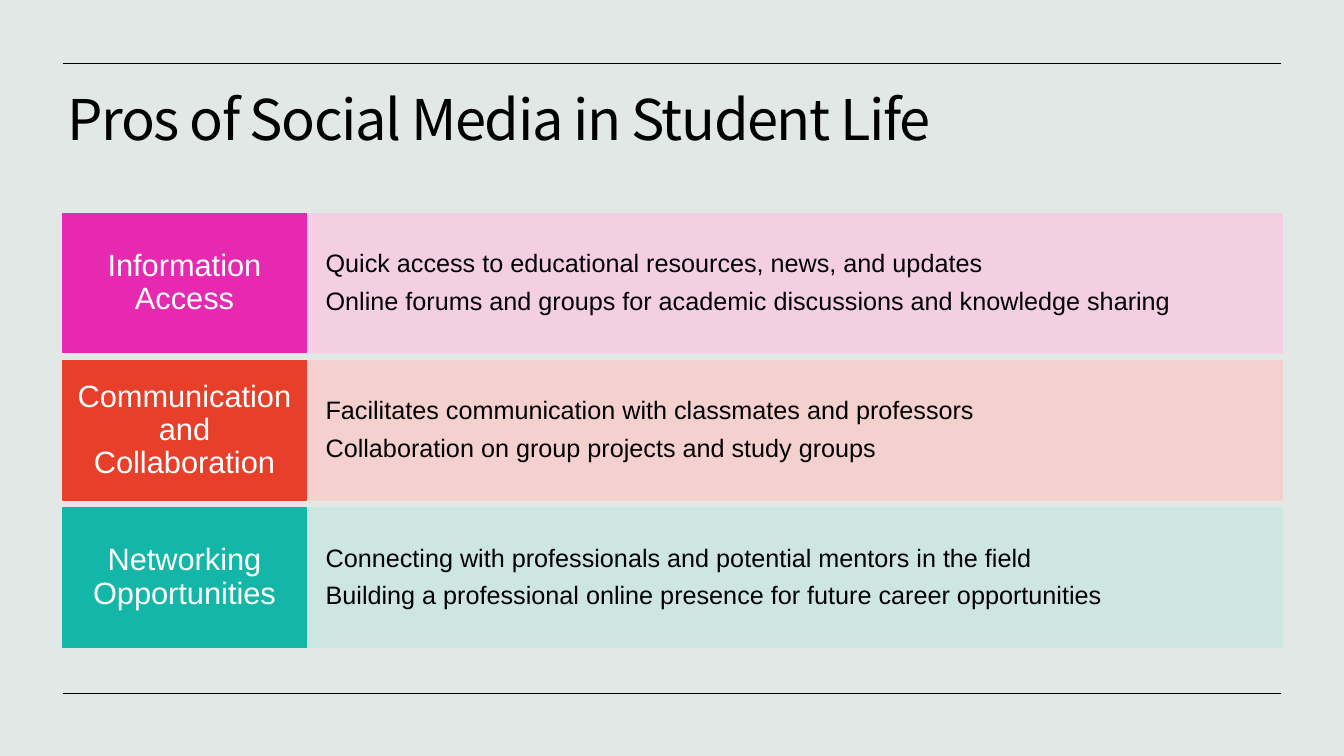
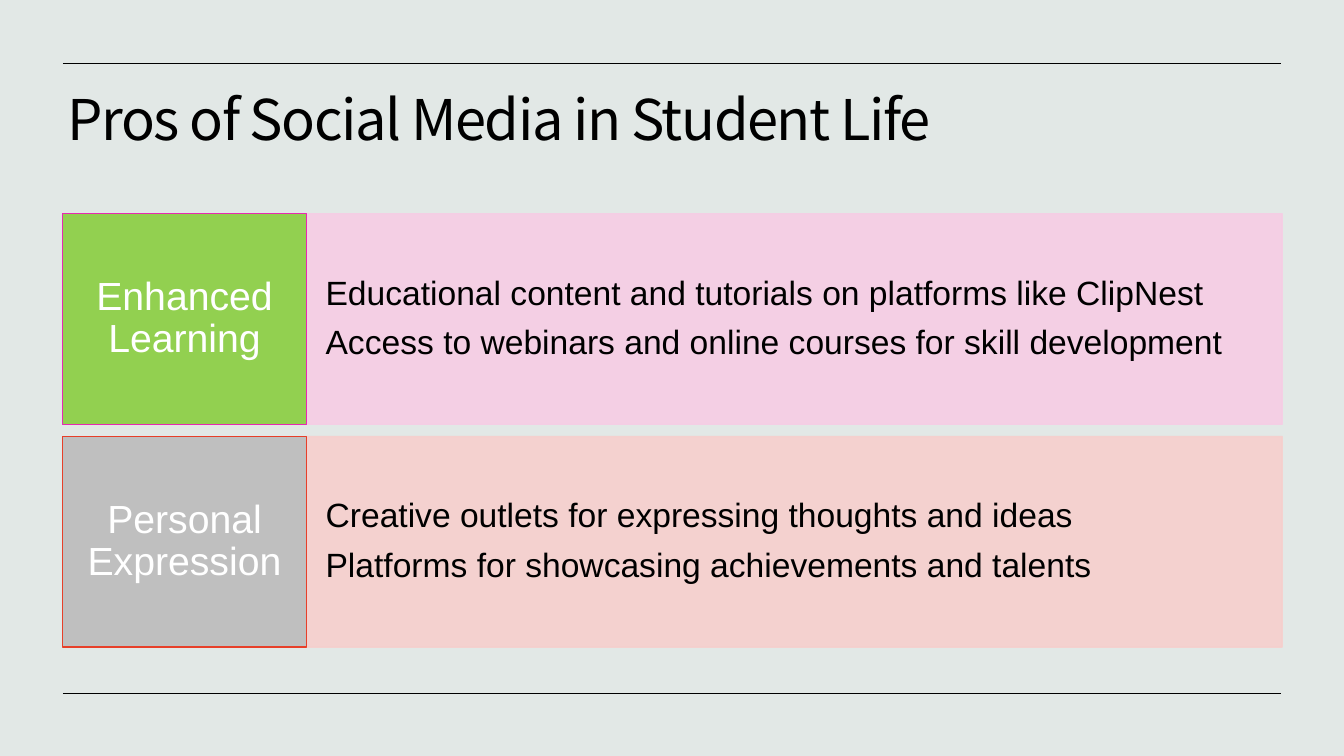
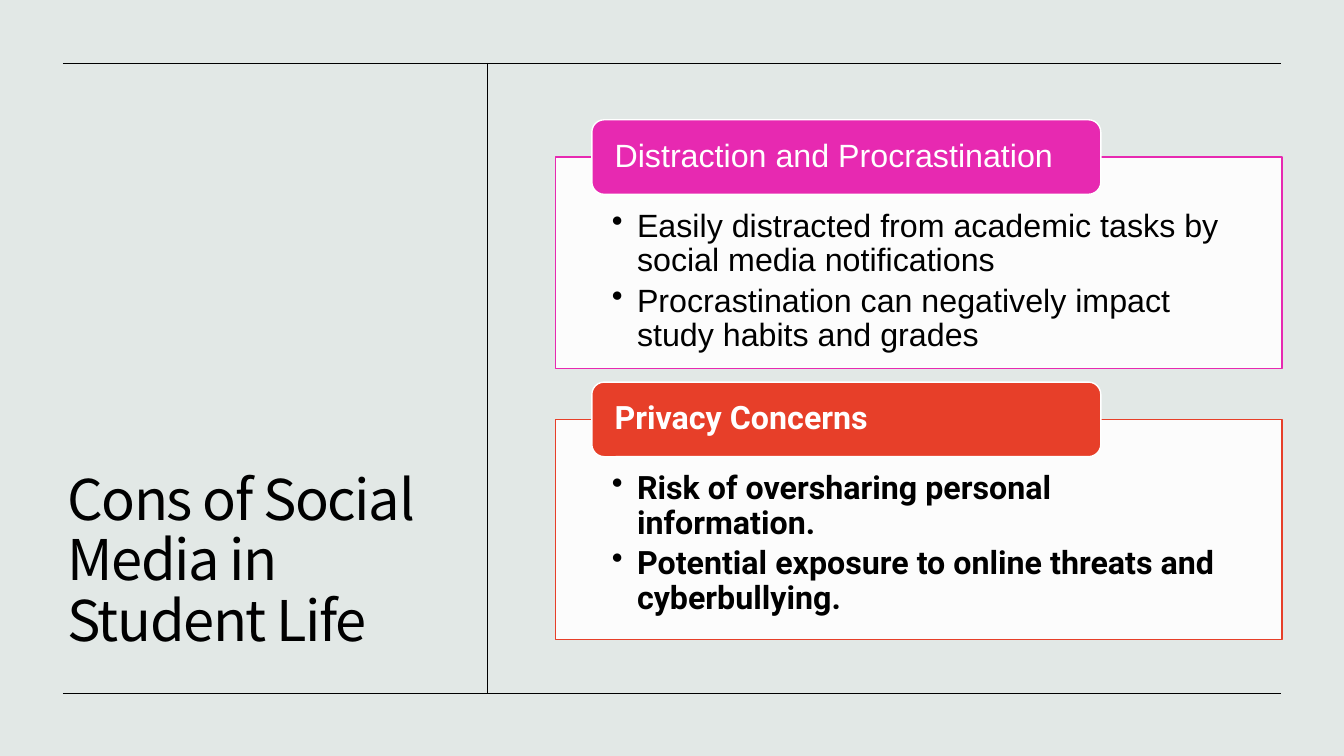
import pptx
import pptx.dml.color
import pptx.enum.shapes
import pptx.enum.text
import pptx.oxml
import pptx.oxml.ns
import pptx.util
from dataclasses import dataclass

Pt = pptx.util.Pt
SHAPE = pptx.enum.shapes.MSO_SHAPE
ANCHOR = pptx.enum.text.MSO_ANCHOR
ALIGN = pptx.enum.text.PP_ALIGN


@dataclass(frozen=True)
class Theme:
    background: str = "E2E8E6"
    ink: str = "000000"
    white: str = "FFFFFF"
    pink: str = "E729B1"
    red: str = "E73F29"
    teal: str = "14B7A7"
    green: str = "92D050"
    grey: str = "BFBFBF"
    pale_pink: str = "F6CDE4"
    pale_red: str = "F6CFCD"
    pale_teal: str = "CCE6E1"
    title_font: str = "Noto Sans CJK KR"
    body_font: str = "Arial"
    strong_font: str = "Roboto"
    title_size: float = 40
    row_label_size: float = 22
    row_detail_size: float = 18
    large_label_size: float = 28
    large_detail_size: float = 24
    card_size: float = 23
    line_spacing: float = 0.9
    loose: float = 0.4    # space after a paragraph, as a share of its type size
    tight: float = 0.17


THEME = Theme()

# Shared page geometry, in points
WIDTH, HEIGHT = 960, 540
LEFT, RIGHT = 44.64, 915.84
RULE_LEFT, RULE_RIGHT = 45, 915
RULE_TOP, RULE_BOTTOM = 45, 495
TITLE_LEFT = 41


def rgb(value):
    return pptx.dml.color.RGBColor.from_string(value)


def add_xml(parent, tag, **attributes):
    child = pptx.oxml.parse_xml(f"<a:{tag} {pptx.oxml.ns.nsdecls('a')}/>")
    for key, value in attributes.items():
        child.set(key, value)
    parent.append(child)


def soften(fill_parent):
    """Make the solid fill inside the given element 90 % opaque."""
    qn = pptx.oxml.ns.qn
    color = fill_parent.find(qn("a:solidFill")).find(qn("a:srgbClr"))
    add_xml(color, "alpha", val="90000")


class Deck:
    def __init__(self, theme):
        self.theme = theme
        self.show = pptx.Presentation()
        self.show.slide_width, self.show.slide_height = Pt(WIDTH), Pt(HEIGHT)
        background = self.show.slide_master.background.fill
        background.solid()
        background.fore_color.rgb = rgb(theme.background)
        self.slide = None

    def new_slide(self, title, top, width, height, anchor=ANCHOR.TOP):
        """Start a slide with its title and the two horizontal rules."""
        self.slide = self.show.slides.add_slide(self.show.slide_layouts[5])
        heading = self.slide.shapes.title
        heading.left, heading.top = Pt(TITLE_LEFT), Pt(top)
        heading.width, heading.height = Pt(width), Pt(height)
        heading.text_frame.auto_size = pptx.enum.text.MSO_AUTO_SIZE.NONE
        self.set_text(heading, [title], self.theme.title_size, self.theme.ink,
                      font=self.theme.title_font, anchor=anchor,
                      insets=(7.2, 3.6, 7.2, 3.6), after=0)
        for run in heading.text_frame.paragraphs[0].runs:
            run._r.get_or_add_rPr().set("spc", "-100")
        for y in (RULE_TOP, RULE_BOTTOM):
            self.rule(RULE_LEFT, y, RULE_RIGHT, y)

    def rule(self, x1, y1, x2, y2):
        rule = self.slide.shapes.add_connector(
            pptx.enum.shapes.MSO_CONNECTOR.STRAIGHT, Pt(x1), Pt(y1), Pt(x2), Pt(y2))
        rule.line.color.rgb = rgb(self.theme.ink)
        rule.line.width = Pt(0.5)
        add_xml(rule._element.spPr, "effectLst")

    def box(self, left, top, width, height, fill, line,
            kind=SHAPE.RECTANGLE, soft_fill=False, soft_line=False):
        box = self.slide.shapes.add_shape(kind, Pt(left), Pt(top), Pt(width), Pt(height))
        box.shadow.inherit = False
        box.fill.solid()
        box.fill.fore_color.rgb = rgb(fill)
        box.line.color.rgb = rgb(line)
        box.line.width = Pt(1)
        if soft_fill:
            soften(box._element.spPr)
        if soft_line:
            soften(box._element.spPr.find(pptx.oxml.ns.qn("a:ln")))
        return box

    def set_text(self, shape, lines, size, color, font=None, bold=False, align=ALIGN.LEFT,
                 anchor=ANCHOR.MIDDLE, insets=(0, 0, 0, 0), after=None, bullets=False):
        frame = shape.text_frame
        frame.word_wrap = True
        frame.vertical_anchor = anchor
        (frame.margin_left, frame.margin_top,
         frame.margin_right, frame.margin_bottom) = map(Pt, insets)
        frame.text = "\n".join(lines)
        after = self.theme.loose if after is None else after
        for paragraph in frame.paragraphs:
            paragraph.alignment = align
            paragraph.line_spacing = self.theme.line_spacing
            paragraph.space_before = Pt(0)
            paragraph.space_after = Pt(round(after * size, 1))
            if bullets:
                settings = paragraph._p.get_or_add_pPr()
                settings.set("marL", str(Pt(18)))
                settings.set("indent", str(-Pt(18)))
                add_xml(settings, "buChar", char="•")
            for run in paragraph.runs:
                run.font.name = font or self.theme.body_font
                run.font.size = Pt(size)
                run.font.bold = bold
                run.font.color.rgb = rgb(color)

    def topic_rows(self, topics, label_size, detail_size):
        """Fill the area below the title with equal rows of label and details."""
        area_top, area_height, label_width, gap_share = 152.64, 309.6, 174.24, 0.058
        height = area_height / (len(topics) + gap_share * (len(topics) - 1))
        detail_left = LEFT + label_width
        for index, (label, details, fill, line, pale) in enumerate(topics):
            top = area_top + index * height * (1 + gap_share)
            detail_box = self.box(detail_left, top, RIGHT - detail_left, height, pale, pale,
                                  soft_fill=True, soft_line=True)
            self.set_text(detail_box, details, detail_size, self.theme.ink,
                          insets=(13.7, 0, 13.7, 0))
            label_box = self.box(LEFT, top, label_width, height, fill, line)
            self.set_text(label_box, [label], label_size, self.theme.white,
                          align=ALIGN.CENTER, insets=(9.4, 0, 9.4, 0))

    def tab_card(self, top, height, heading, points, accent, font, bold):
        """Draw a bulleted card with a heading tab over its top edge."""
        card_left, tab_height = 396.72, 53.3
        card = self.box(card_left, top, RIGHT - card_left, height, self.theme.white, accent,
                        soft_fill=True)
        self.set_text(card, points, self.theme.card_size, self.theme.ink, font, bold,
                      anchor=ANCHOR.TOP, insets=(40.3, 37.4, 40.3, 13),
                      after=self.theme.tight, bullets=True)
        tab = self.box(card_left + 26, top - tab_height / 2, 363.6, tab_height,
                       accent, self.theme.white, SHAPE.ROUNDED_RECTANGLE)
        self.set_text(tab, [heading], self.theme.card_size, self.theme.white, font, bold,
                      insets=(13.7, 0, 13.7, 0))


def main():
    deck = Deck(THEME)
    pros_title = "Pros of Social Media in Student Life"
    pros_place = dict(top=62, width=874.8, height=82.8)

    # Pros: access, communication, networking
    deck.new_slide(pros_title, **pros_place)
    deck.topic_rows([
        ("Information Access",
         ["Quick access to educational resources, news, and updates",
          "Online forums and groups for academic discussions and knowledge sharing"],
         THEME.pink, THEME.pink, THEME.pale_pink),
        ("Communication and Collaboration",
         ["Facilitates communication with classmates and professors",
          "Collaboration on group projects and study groups"],
         THEME.red, THEME.red, THEME.pale_red),
        ("Networking Opportunities",
         ["Connecting with professionals and potential mentors in the field",
          "Building a professional online presence for future career opportunities"],
         THEME.teal, THEME.teal, THEME.pale_teal),
    ], THEME.row_label_size, THEME.row_detail_size)

    # Pros: learning, expression
    deck.new_slide(pros_title, **pros_place)
    deck.topic_rows([
        ("Enhanced Learning",
         ["Educational content and tutorials on platforms like ClipNest",
          "Access to webinars and online courses for skill development"],
         THEME.green, THEME.pink, THEME.pale_pink),
        ("Personal Expression",
         ["Creative outlets for expressing thoughts and ideas",
          "Platforms for showcasing achievements and talents"],
         THEME.grey, THEME.red, THEME.pale_red),
    ], THEME.large_label_size, THEME.large_detail_size)

    # Cons
    deck.new_slide("Cons of Social Media in Student Life",
                   top=71.3, width=275.8, height=398.9, anchor=ANCHOR.BOTTOM)
    deck.rule(348, RULE_TOP, 348, RULE_BOTTOM)
    deck.tab_card(112.2, 151.2, "Distraction and Procrastination",
                  ["Easily distracted from academic tasks by social media notifications",
                   "Procrastination can negatively impact study habits and grades"],
                  THEME.pink, THEME.body_font, False)
    deck.tab_card(299.6, 157, "Privacy Concerns",
                  ["Risk of oversharing personal information.",
                   "Potential exposure to online threats and cyberbullying."],
                  THEME.red, THEME.strong_font, True)

    deck.show.save("out.pptx")


if __name__ == "__main__":
    main()
